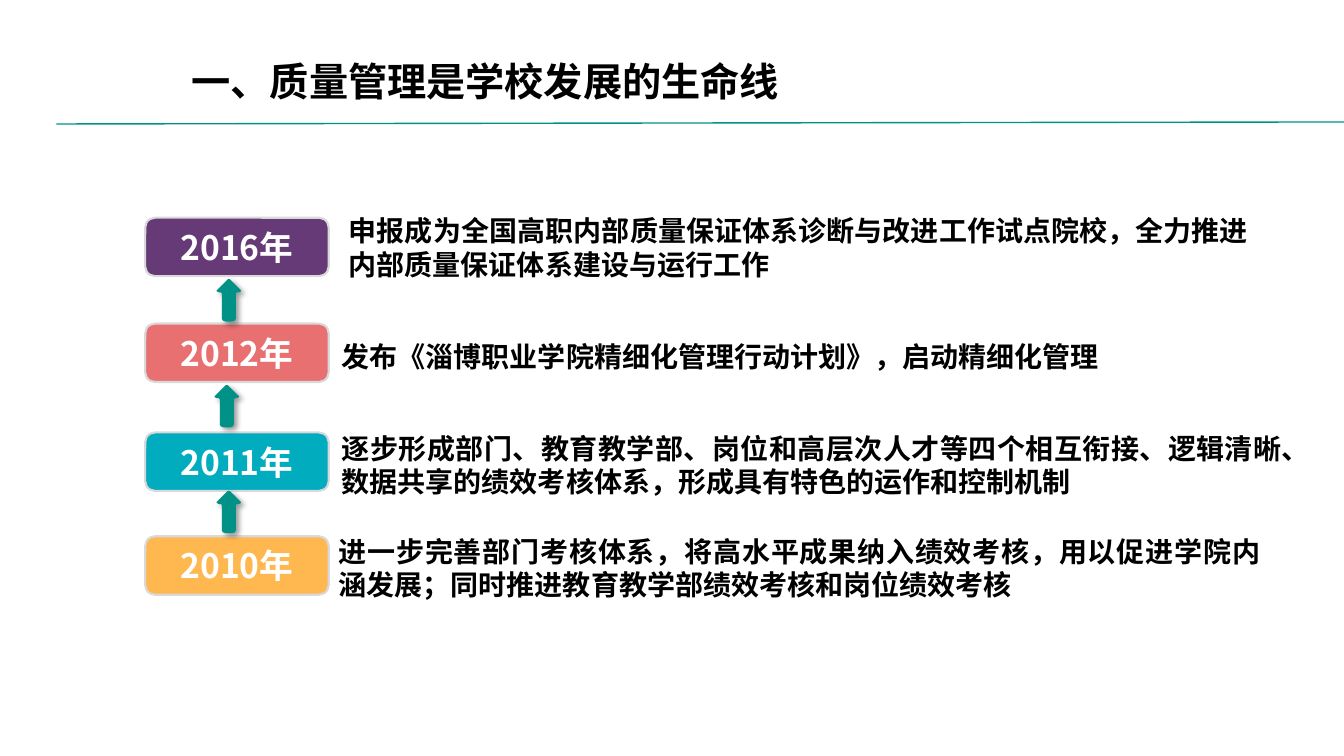
from lxml import etree
from pptx import Presentation
from pptx.dml.color import RGBColor
from pptx.enum import shapes, text
from pptx.oxml.ns import qn
from pptx.util import Inches, Pt

FONT = "Noto Sans CJK SC"
TEAL = "009287"
TITLE = "一、质量管理是学校发展的生命线"
BOX_LEFT, BOX_W, BOX_H = 1.44, 1.82, 0.58

# year, colour, box top, description, its left, top, width, height, line spacing, font
STAGES = [
    ("2010年", "FFB850", 5.32,
     "进一步完善部门考核体系，将高水平成果纳入绩效考核，用以促进学院内涵发展；同时推进教育教学部绩效考核和岗位绩效考核",
     (3.26, 5.25, 9.34, 0.79), 1, "Arial"),
    ("2011年", "01ACBE", 4.29,
     "逐步形成部门、教育教学部、岗位和高层次人才等四个相互衔接、逻辑清晰、数据共享的绩效考核体系，形成具有特色的运作和控制机制",
     (3.29, 4.23, 9.8, 0.77), 1, FONT),
    ("2012年", "E87071", 3.21,
     "发布《淄博职业学院精细化管理行动计划》，启动精细化管理",
     (3.29, 3.15, 8.24, 0.6), 1.5, FONT),
    ("2016年", "663A77", 2.16,
     "申报成为全国高职内部质量保证体系诊断与改进工作试点院校，全力推进内部质量保证体系建设与运行工作",
     (3.36, 2.07, 9.12, 0.79), 1, "Arial"),
]
ARROWS = [(2.27, 4.87), (2.25, 3.82), (2.27, 2.77)]  # centre x, tip y
# right half of the arrow, from the tip down: offset from centre, offset from tip
HALF_ARROW = [(0.01, 0), (0.02, 0.01), (0.11, 0.1), (0.12, 0.11), (0.12, 0.12),
              (0.1, 0.13), (0.08, 0.13), (0.07, 0.14), (0.07, 0.39),
              (0.06, 0.41), (0.03, 0.42)]


def color(hex_string):
    return RGBColor.from_string(hex_string)


def add_run(p, words, size, rgb, font=FONT):
    r = p.add_run()
    r.text = words
    r.font.size, r.font.bold, r.font.name = Pt(size), True, font
    r.font.color.rgb = color(rgb)
    ea = etree.SubElement(r.font._element, qn("a:ea"))
    ea.set("typeface", FONT)


def add_year(s, year, fill, top):
    sp = s.shapes.add_shape(shapes.MSO_SHAPE.ROUNDED_RECTANGLE, Inches(BOX_LEFT),
                            Inches(top), Inches(BOX_W), Inches(BOX_H))
    sp.shadow.inherit = False
    sp.fill.solid()
    sp.fill.fore_color.rgb = color(fill)
    sp.line.color.rgb = color("D9D9D9")
    sp.line.width = Pt(1.5)
    tf = sp.text_frame
    tf.margin_top = tf.margin_bottom = 0
    tf.vertical_anchor = text.MSO_ANCHOR.MIDDLE
    p = tf.paragraphs[0]
    p.alignment = text.PP_ALIGN.CENTER
    add_run(p, year, 24, "FFFFFF")


def add_description(s, words, box, spacing, font):
    tf = s.shapes.add_textbox(*map(Inches, box)).text_frame
    tf.word_wrap = True
    p = tf.paragraphs[0]
    p.alignment = text.PP_ALIGN.JUSTIFY
    p.line_spacing = spacing
    add_run(p, words, 20, "000000", font)


def add_up_arrow(s, x, y):
    outline = HALF_ARROW + [(-dx, dy) for dx, dy in reversed(HALF_ARROW)]
    points = [(Inches(x + dx), Inches(y + dy)) for dx, dy in outline]
    builder = s.shapes.build_freeform(*points[0])
    builder.add_line_segments(points[1:], close=True)
    sp = builder.convert_to_shape()
    sp.fill.solid()
    sp.fill.fore_color.rgb = color(TEAL)
    sp.line.fill.background()
    sp.shadow.inherit = False
    effects = sp._element.spPr.find(qn("a:effectLst"))
    shadow = etree.SubElement(effects, qn("a:outerShdw"), blurRad=str(Pt(4)),
                              dist=str(Pt(3)), dir=str(45 * 60000),
                              algn="tl", rotWithShape="0")
    black = etree.SubElement(shadow, qn("a:srgbClr"), val="000000")
    etree.SubElement(black, qn("a:alpha"), val="40000")


def main():
    prs = Presentation()
    prs.slide_width, prs.slide_height = Inches(13.33), Inches(7.5)
    s = prs.slides.add_slide(prs.slide_layouts[5])

    title = s.shapes.title
    title.left, title.top, title.width, title.height = map(Inches, (1.8, 0.3, 8.62, 1.01))
    tf = title.text_frame
    tf.vertical_anchor = text.MSO_ANCHOR.MIDDLE
    tf.paragraphs[0].alignment = text.PP_ALIGN.LEFT
    add_run(tf.paragraphs[0], TITLE, 28, "000000")

    rule = s.shapes.add_connector(shapes.MSO_CONNECTOR.STRAIGHT, Inches(0.56),
                                  Inches(1.23), Inches(13.33), Inches(1.21))
    rule.line.color.rgb = color(TEAL)
    rule.line.width = Pt(1)
    etree.SubElement(rule._element.spPr, qn("a:effectLst"))

    for year, fill, top, words, box, spacing, font in STAGES:
        add_year(s, year, fill, top)
        add_description(s, words, box, spacing, font)
    for x, y in ARROWS:
        add_up_arrow(s, x, y)
    prs.save("out.pptx")


if __name__ == "__main__":
    main()
